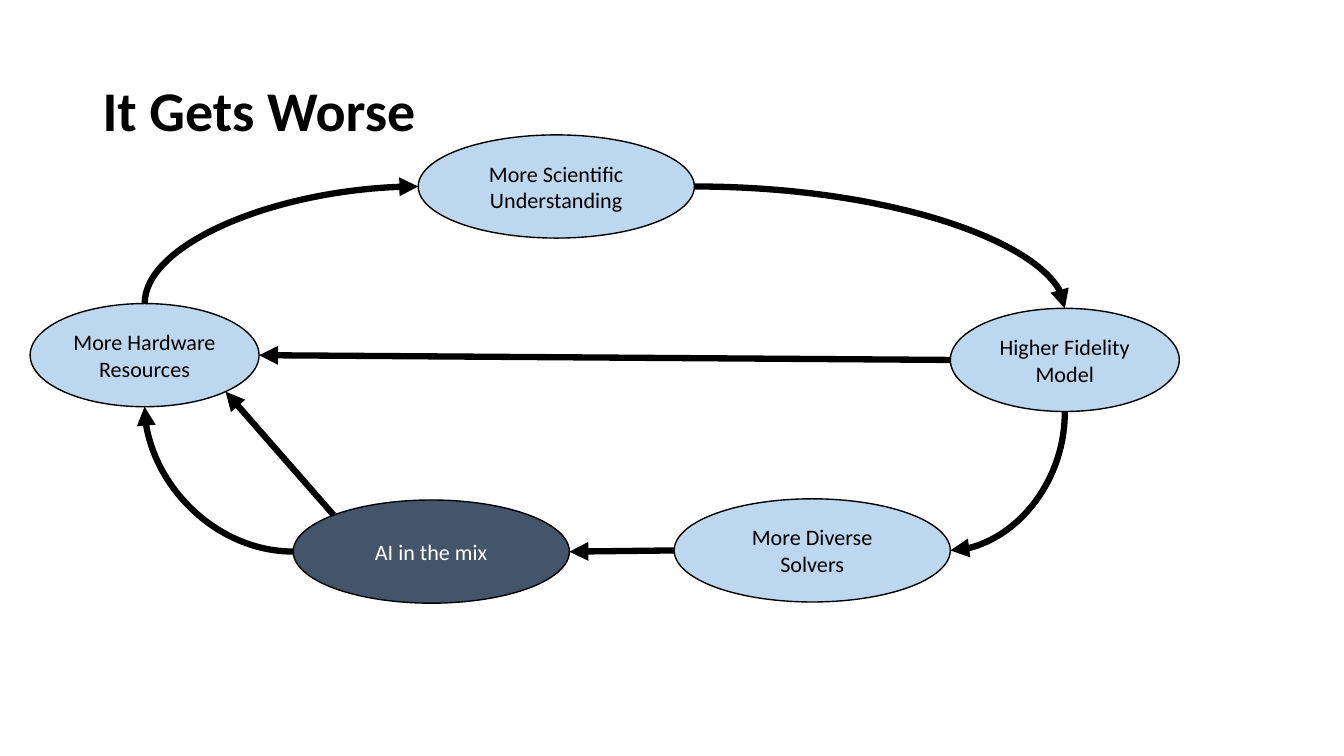
from math import sqrt

from pptx import Presentation
from pptx.dml.color import RGBColor
from pptx.enum.shapes import MSO_CONNECTOR, MSO_SHAPE
from pptx.enum.text import MSO_ANCHOR, MSO_AUTO_SIZE, PP_ALIGN
from pptx.oxml.ns import qn
from pptx.util import Cm, Pt
from lxml import etree

OVAL = MSO_SHAPE.OVAL
STRAIGHT = MSO_CONNECTOR.STRAIGHT
CURVE = MSO_CONNECTOR.CURVE
MIDDLE = MSO_ANCHOR.MIDDLE
NO_FIT = MSO_AUTO_SIZE.NONE
CENTER = PP_ALIGN.CENTER
LEFT = PP_ALIGN.LEFT

COLORS = {"black": "000000", "white": "FFFFFF", "sky": "BDD7EE", "slate": "44546A"}
DIAG = sqrt(0.5)
SIDES = {
    "top": (0, -1),
    "left": (-1, 0),
    "bottom": (0, 1),
    "right": (1, 0),
    "top left": (-DIAG, -DIAG),
    "bottom right": (DIAG, DIAG),
}
WIDE, SLIM, TALL = 6.96, 5.77, 2.6


class Deck:
    def __init__(self):
        self.font = "Calibri"
        self.show = Presentation()
        self.show.slide_width = Cm(33.87)
        self.show.slide_height = Cm(19.05)
        self.slide = self.show.slides.add_slide(self.show.slide_layouts[5])

    def color(self, name):
        return RGBColor.from_string(COLORS[name])

    def label(self, frame, text, size, color, align, bold=False):
        frame.text = text
        frame.word_wrap = True
        frame.auto_size = NO_FIT
        frame.vertical_anchor = MIDDLE
        for para in frame.paragraphs:
            para.alignment = align
            for run in para.runs:
                run.font.name = self.font
                run.font.size = Pt(size)
                run.font.bold = bold
                run.font.color.rgb = self.color(color)

    def title(self, text):
        shape = self.slide.shapes.title
        shape.left, shape.top = Cm(2.33), Cm(1.02)
        shape.width, shape.height = Cm(29.21), Cm(3.68)
        self.label(shape.text_frame, text, 40, "black", LEFT, True)
        shape.text_frame.paragraphs[0].line_spacing = 0.9

    def node(self, text, left, top, width, fill="sky", ink="black"):
        shape = self.slide.shapes.add_shape(OVAL, Cm(left), Cm(top), Cm(width), Cm(TALL))
        shape.shadow.inherit = False
        shape.fill.solid()
        shape.fill.fore_color.rgb = self.color(fill)
        shape.line.color.rgb = self.color("black")
        shape.line.width = Pt(1)
        frame = shape.text_frame
        frame.margin_left = frame.margin_right = Cm(0.1)
        self.label(frame, text, 15.8, ink, CENTER)
        return shape

    def point(self, node, side):
        across, down = SIDES[side]
        return (
            node.left + node.width * (1 + across) / 2,
            node.top + node.height * (1 + down) / 2,
        )

    def link(self, kind, start, end):
        ends = [round(value) for value in (*start, *end)]
        line = self.slide.shapes.add_connector(kind, *ends)
        line.line.color.rgb = self.color("black")
        line.line.width = Pt(4.5)
        props = line._element.spPr
        etree.SubElement(props, qn("a:effectLst"))
        etree.SubElement(props.find(qn("a:ln")), qn("a:tailEnd"), type="triangle")
        return props

    def arrow(self, source, out, target, into):
        self.link(STRAIGHT, self.point(source, out), self.point(target, into))

    def bend(self, source, out, target, into):
        (x1, y1), (x2, y2) = self.point(source, out), self.point(target, into)
        turned = out in ("top", "bottom")
        if turned:
            mid_x, mid_y = (x1 + x2) / 2, (y1 + y2) / 2
            half_x, half_y = (y2 - y1) / 2, (x1 - x2) / 2
            x1, y1 = mid_x - half_x, mid_y - half_y
            x2, y2 = mid_x + half_x, mid_y + half_y
        props = self.link(CURVE, (x1, y1), (x2, y2))
        props.find(qn("a:prstGeom")).set("prst", "curvedConnector2")
        if turned:
            props.find(qn("a:xfrm")).set("rot", "5400000")


def main():
    deck = Deck()
    deck.title("It Gets Worse")
    science = deck.node("More Scientific Understanding", 10.54, 3.4, WIDE)
    model = deck.node("Higher Fidelity\nModel", 23.95, 7.77, SLIM)
    solvers = deck.node("More Diverse\nSolvers", 16.99, 12.57, WIDE)
    hardware = deck.node("More Hardware\nResources", 0.76, 7.65, SLIM)
    mix = deck.node("AI in the mix", 7.39, 12.6, WIDE, "slate", "white")

    deck.bend(science, "right", model, "top")
    deck.bend(model, "bottom", solvers, "right")
    deck.bend(hardware, "top", science, "left")
    deck.bend(mix, "left", hardware, "bottom")
    deck.arrow(model, "left", hardware, "right")
    deck.arrow(solvers, "left", mix, "right")
    deck.arrow(mix, "top left", hardware, "bottom right")
    deck.show.save("out.pptx")


if __name__ == "__main__":
    main()
